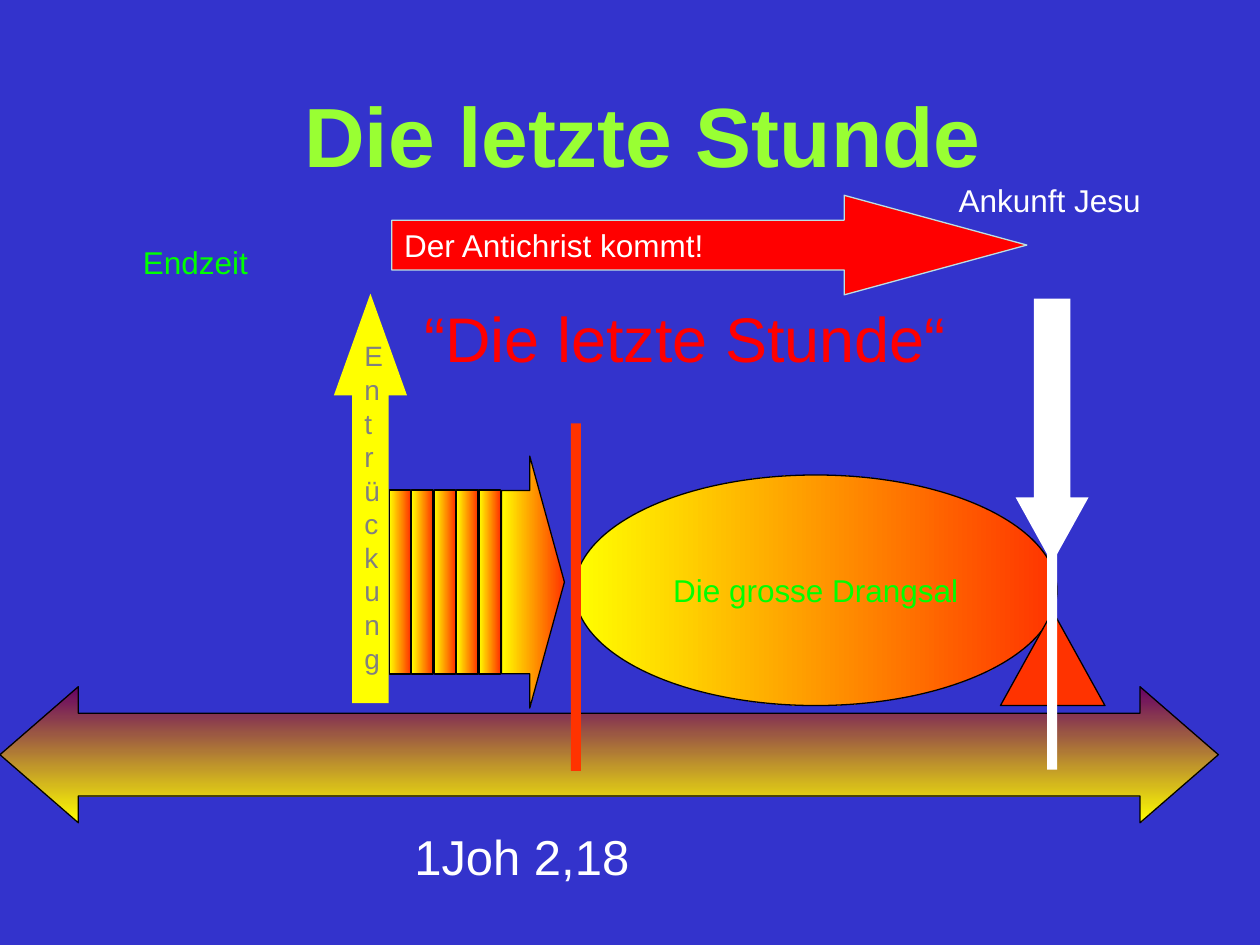
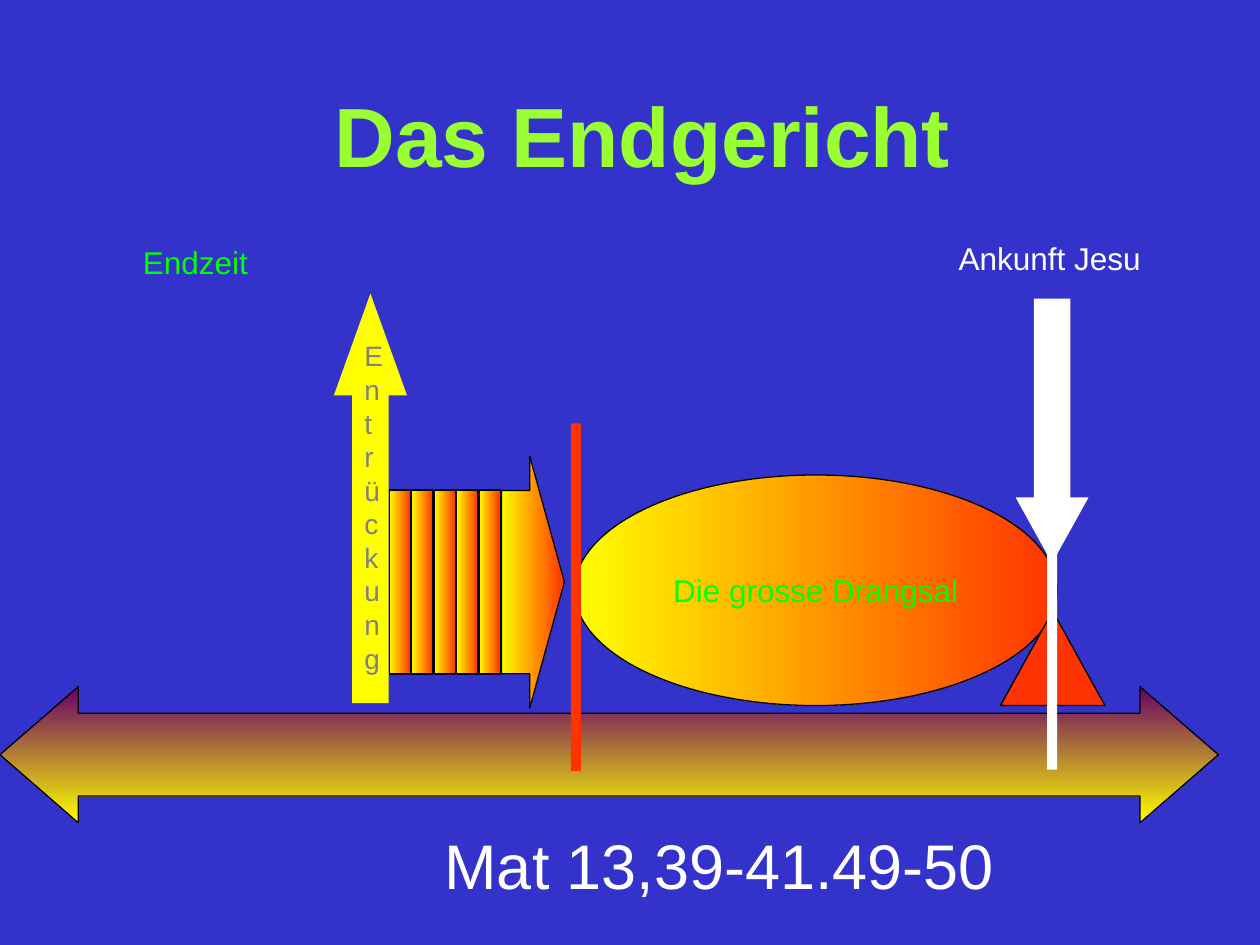
import pptx
import pptx.util
import pptx.dml.color
import pptx.enum.shapes
import pptx.enum.text

Inches = pptx.util.Inches
Pt = pptx.util.Pt
KIND = pptx.enum.shapes.MSO_SHAPE
ALIGN = pptx.enum.text.PP_ALIGN
ANCHOR = pptx.enum.text.MSO_ANCHOR
FIT = pptx.enum.text.MSO_AUTO_SIZE

FONT = "Arial"
COLORS = {
    "ground": "3333CC", "title": "99FF33", "label": "00FF00",
    "white": "FFFFFF", "black": "000000", "gray": "808080",
    "red": "FF0000", "fire": "FF3300", "yellow": "FFFF00",
    "plum": "660066", "pale": "BBE0E3",
}
GLOW = ("yellow", "fire")
DUSK = ("plum", "yellow")


def color(name):
    return pptx.dml.color.RGBColor.from_string(COLORS[name])


def write(shape, text, size, ink, align=ALIGN.LEFT, bold=False,
          anchor=ANCHOR.TOP, wrap=True):
    frame = shape.text_frame
    frame.word_wrap = wrap
    frame.vertical_anchor = anchor
    line = frame.paragraphs[0]
    line.alignment = align
    run = line.add_run()
    run.text = text
    run.font.name = FONT
    run.font.size = Pt(size)
    run.font.bold = bold
    run.font.color.rgb = color(ink)


def add_text(shapes, box, text, size, ink, grow=True, **style):
    label = shapes.add_textbox(*map(Inches, box))
    write(label, text, size, ink, **style)
    if grow:
        label.text_frame.auto_size = FIT.SHAPE_TO_FIT_TEXT
    return label


def add_form(shapes, kind, box, fill, line=None, adjust=(), angle=0):
    """Add a preset shape; fill is a colour name or a pair for a gradient."""
    form = shapes.add_shape(kind, *map(Inches, box))
    form.shadow.inherit = False
    for index, value in enumerate(adjust):
        form.adjustments[index] = value
    if isinstance(fill, tuple):
        form.fill.gradient()
        form.fill.gradient_angle = angle
        for stop, name in zip(form.fill.gradient_stops, fill):
            stop.color.rgb = color(name)
    else:
        form.fill.solid()
        form.fill.fore_color.rgb = color(fill)
    if line:
        form.line.color.rgb = color(line)
        form.line.width = Pt(0.75)
    else:
        form.line.fill.background()
    return form


def add_rapture(shapes):
    add_form(shapes, KIND.UP_ARROW, (2.65, 2.33, 0.58, 3.25), "yellow",
             adjust=(0.5, 1.393))
    label = add_text(shapes, (1.48, 4.01, 2.88, 0.14), "Entrückung", 16,
                     "gray", align=ALIGN.CENTER)
    label.rotation = 270
    label.text_frame._txBody.bodyPr.set("vert", "eaVert")


def add_stripes(shapes, count=5, left=3.09, step=0.178):
    """Add the row of bars that ends in an arrowhead."""
    for index in range(count):
        add_form(shapes, KIND.RECTANGLE,
                 (left + index * step, 3.89, 0.17, 1.46), GLOW, "black")
    add_form(shapes, KIND.RIGHT_ARROW, (left + count * step, 3.62, 0.5, 2),
             GLOW, "black", (0.727, 0.55))


def add_coming(shapes, top, height):
    """Add the grouped arrival sign, with its label at the given top."""
    parts = shapes.add_group_shape().shapes
    add_form(parts, KIND.ISOSCELES_TRIANGLE, (7.94, 4.85, 0.83, 0.75),
             "fire", "black")
    add_form(parts, KIND.DOWN_ARROW, (8.06, 2.37, 0.58, 2.1), "white",
             adjust=(0.5, 0.902))
    add_form(parts, KIND.RECTANGLE, (8.31, 3.35, 0.08, 2.76), "white")
    add_text(parts, (7.12, top, 2.42, height), "Ankunft Jesu", 18, "white",
             align=ALIGN.CENTER)


def add_scene(deck, title, top, height):
    """Add a slide with the title and the timeline that all slides share."""
    slide = deck.slides.add_slide(deck.slide_layouts[6])
    slide.background.fill.solid()
    slide.background.fill.fore_color.rgb = color("ground")
    shapes = slide.shapes
    add_text(shapes, (0.2, 0.44, 9.8, 1.25), title, 48, "title", grow=False,
             align=ALIGN.CENTER, bold=True, anchor=ANCHOR.MIDDLE)
    add_form(shapes, KIND.LEFT_RIGHT_ARROW, (0, 5.45, 9.67, 1.08), DUSK,
             "black", (0.608, 0.576), angle=270)
    trial = add_form(shapes, KIND.OVAL, (4.56, 3.77, 3.83, 1.83), GLOW,
                     "black")
    write(trial, "Die grosse Drangsal", 18, "label", ALIGN.CENTER,
          anchor=ANCHOR.MIDDLE, wrap=False)
    add_form(shapes, KIND.RECTANGLE, (4.53, 3.36, 0.08, 2.76), "fire")
    add_rapture(shapes)
    add_stripes(shapes)
    add_coming(shapes, top, height)
    add_text(shapes, (0.54, 1.88, 2.02, 0.5), "Endzeit", 18, "label",
             align=ALIGN.CENTER)
    return shapes


def main():
    deck = pptx.Presentation()
    deck.slide_width, deck.slide_height = Inches(10), Inches(7.5)

    hour = add_scene(deck, "Die letzte Stunde", 1.39, 0.44)
    add_text(hour, (3.27, 2.33, 4.8, 0.71), "“Die letzte Stunde“", 36, "red")
    add_text(hour, (3.19, 6.51, 1.93, 0.57), "1Joh 2,18", 28, "white",
             wrap=False)
    foe = add_form(hour, KIND.RIGHT_ARROW, (3.11, 1.55, 5.04, 0.79), "red",
                   "pale", (0.5, 1.835))
    write(foe, "Der Antichrist kommt!", 18, "white", anchor=ANCHOR.MIDDLE,
          wrap=False)

    court = add_scene(deck, "Das Endgericht", 1.85, 0.4)
    add_text(court, (3.43, 6.51, 4.61, 0.71), "Mat 13,39-41.49-50", 36,
             "white", wrap=False)

    deck.save("out.pptx")


if __name__ == "__main__":
    main()
